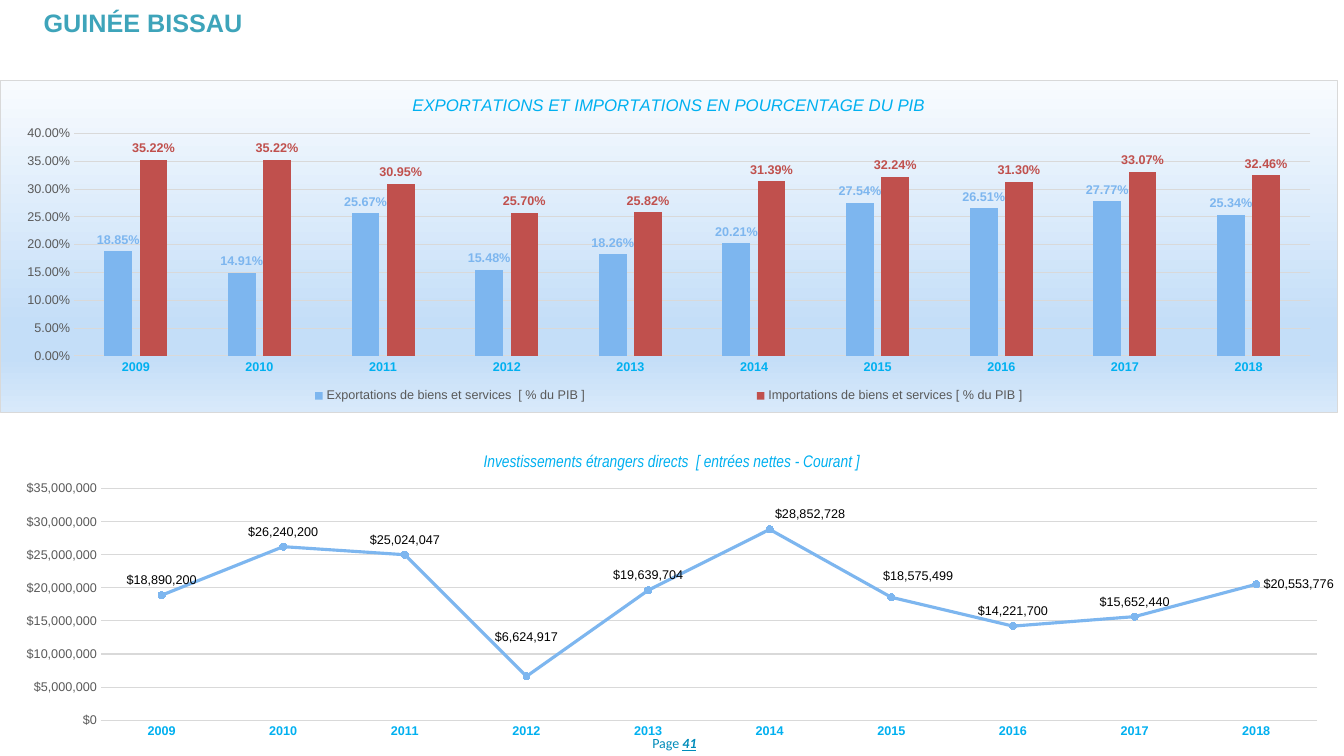
from lxml import etree
from pptx import Presentation
from pptx.chart.data import CategoryChartData as Data
from pptx.dml.color import RGBColor
from pptx.enum.chart import XL_CHART_TYPE as Kind, XL_LABEL_POSITION as Pos
from pptx.enum.chart import XL_LEGEND_POSITION as Side, XL_MARKER_STYLE as Mark
from pptx.enum.chart import XL_TICK_MARK as Tick
from pptx.enum.text import MSO_ANCHOR as Anchor, MSO_AUTO_SIZE as Auto, PP_ALIGN as Align
from pptx.oxml import parse_xml
from pptx.util import Pt

BLUE = RGBColor(0x7D, 0xB6, 0xEF)
RED = RGBColor(0xC0, 0x50, 0x4D)
SKY = RGBColor(0x00, 0xB0, 0xF0)
TEAL = RGBColor(0x3E, 0xA4, 0xBA)
OCEAN = RGBColor(0x00, 0x8C, 0xBA)
GREY = RGBColor(0x59, 0x59, 0x59)
PALE = RGBColor(0xD9, 0xD9, 0xD9)
BLACK = RGBColor(0, 0, 0)
WHITE = RGBColor(0xFF, 0xFF, 0xFF)
SHADES = [(0, RGBColor(0xF8, 0xFB, 0xFE)), (74, RGBColor(0xC4, 0xDE, 0xF8)),
          (83, RGBColor(0xC4, 0xDE, 0xF8)), (100, RGBColor(0xD8, 0xE9, 0xFA))]

C_NS = "http://schemas.openxmlformats.org/drawingml/2006/chart"
A_NS = "http://schemas.openxmlformats.org/drawingml/2006/main"
X_NS = "http://schemas.microsoft.com/office/drawing/2012/chart"

YEARS = [str(year) for year in range(2009, 2019)]
TRADE = [
    ("Exportations de biens et services  [ % du PIB ]", BLUE,
     [.1885, .1491, .2567, .1548, .1826, .2021, .2754, .2651, .2777, .2534]),
    ("Importations de biens et services [ % du PIB ]", RED,
     [.3522, .3522, .3095, .257, .2582, .3139, .3224, .313, .3307, .3246]),
]
FLOWS = [18890200, 26240200, 25024047, 6624917, 19639704,
         28852728, 18575499, 14221700, 15652440, 20553776]
SHIFTS = {3: (0, -.08), 5: (.03, 0), 6: (.02, -.02)}
MONEY = '"$"#,##0'


def style(font, size, color, bold=False, italic=False, name="Arial"):
    font.size, font.name = Pt(size), name
    font.bold, font.italic = bold, italic
    font.color.rgb = color


def place(node, index, **parts):
    for old in node.xpath("c:layout"):
        node.remove(old)
    layout = etree.Element(f"{{{C_NS}}}layout")
    manual = etree.SubElement(layout, f"{{{C_NS}}}manualLayout")
    for tag, value in parts.items():
        etree.SubElement(manual, f"{{{C_NS}}}{tag}", val=str(value))
    node.insert(index, layout)


def frame(node, index, x, y, w, h, **parts):
    place(node, index, **parts, xMode="edge", yMode="edge", x=x, y=y, w=w, h=h)


def paint(chart, fill, line):
    props = parse_xml(f'<c:spPr xmlns:c="{C_NS}" xmlns:a="{A_NS}">{fill}'
                      f'<a:ln w="{Pt(.75)}">{line}</a:ln></c:spPr>')
    chart.element.xpath("c:chart")[0].addnext(props)


def solid(color):
    return f'<a:solidFill><a:srgbClr val="{color}"/></a:solidFill>'


def blend(stops):
    marks = "".join(f'<a:gs pos="{pos * 1000}"><a:srgbClr val="{color}"/></a:gs>'
                    for pos, color in stops)
    return f'<a:gradFill><a:gsLst>{marks}</a:gsLst><a:lin ang="5400000" scaled="0"/></a:gradFill>'


def label(series, color, bold, form, pos):
    labels = series.data_labels
    labels.show_value = True
    labels.number_format, labels.number_format_is_linked = form, False
    labels.position = pos
    style(labels.font, 9, color, bold)


def unlead(chart):
    labels = chart.element.xpath(".//c:ser/c:dLbls")[0]
    for lead in labels.xpath("c:showLeaderLines"):
        lead.set("val", "0")
    labels.append(parse_xml(
        f'<c:extLst xmlns:c="{C_NS}"><c:ext xmlns:c15="{X_NS}" '
        'uri="{CE6537A1-D6FC-4f65-9D91-7224C49458BB}">'
        '<c15:showLeaderLines val="0"/></c:ext></c:extLst>'))


def add_chart(slide, kind, box, rows, title, face, form, top, step, area):
    data = Data(number_format=form)
    data.categories = YEARS
    for name, values in rows:
        data.add_series(name, values)
    chart = slide.shapes.add_chart(kind, *map(Pt, box), data).chart
    style(chart.font, 10, BLACK)
    chart.has_legend = False
    chart.has_title = True
    para = chart.chart_title.text_frame.paragraphs[0]
    para.text = title
    style(para.font, 12, SKY, italic=True, name=face)
    chart.chart_title.include_in_layout = False

    years, scale = chart.category_axis, chart.value_axis
    for axis in (years, scale):
        axis.major_tick_mark = axis.minor_tick_mark = Tick.NONE
    style(years.tick_labels.font, 9, SKY, True)
    years.format.line.color.rgb = PALE
    years.format.line.width = Pt(.75)
    style(scale.tick_labels.font, 9, GREY)
    scale.tick_labels.number_format = form
    scale.tick_labels.number_format_is_linked = False
    scale.minimum_scale, scale.maximum_scale, scale.major_unit = 0, top, step
    scale.format.line.fill.background()
    scale.major_gridlines.format.line.color.rgb = PALE
    scale.major_gridlines.format.line.width = Pt(.75)
    frame(chart.element.xpath(".//c:plotArea")[0], 0, *area, layoutTarget="inner")
    return chart


def add_trade(slide):
    chart = add_chart(slide, Kind.COLUMN_CLUSTERED, (0, 57, 955.5, 238),
                      [(name, values) for name, _, values in TRADE],
                      "EXPORTATIONS ET IMPORTATIONS EN POURCENTAGE DU PIB",
                      "Arial", "0.00%", .4, .05, (.055, .16, .925, .67))
    plot = chart.plots[0]
    plot.gap_width, plot.overlap, plot.vary_by_categories = 219, -27, False
    for series, (_, color, _) in zip(plot.series, TRADE):
        series.format.fill.solid()
        series.format.fill.fore_color.rgb = color
        label(series, color, True, "0.00%", Pos.OUTSIDE_END)
    chart.has_legend = True
    chart.legend.position = Side.BOTTOM
    chart.legend.include_in_layout = False
    style(chart.legend.font, 9, GREY)
    frame(chart.element.xpath(".//c:legend")[0], 1, .11, .91, .78, .08)
    paint(chart, blend(SHADES), solid(PALE))


def add_flows(slide):
    chart = add_chart(slide, Kind.LINE_MARKERS, (0, 313, 960, 219),
                      [("Series 1", FLOWS)],
                      "Investissements étrangers directs  [ entrées nettes - Courant ]",
                      "Arial Narrow", MONEY, 35000000, 5000000,
                      (.075, .165, .905, .755))
    chart.plots[0].vary_by_categories = False
    series = chart.plots[0].series[0]
    series.smooth = False
    series.format.line.color.rgb = BLUE
    series.format.line.width = Pt(2.25)
    marker = series.marker
    marker.style, marker.size = Mark.CIRCLE, 5
    marker.format.fill.solid()
    marker.format.fill.fore_color.rgb = BLUE
    marker.format.line.color.rgb = BLUE
    label(series, BLACK, False, MONEY, Pos.ABOVE)
    for index, (x, y) in SHIFTS.items():
        point = series.points[index].data_label
        point.position = Pos.ABOVE
        style(point.font, 9, BLACK)
        node = chart.element.xpath(f".//c:dLbl[c:idx/@val='{index}']")[0]
        place(node, 1, x=x, y=y)
    last = series.points[len(FLOWS) - 1].data_label
    last.position = Pos.RIGHT
    style(last.font, 9, BLACK)
    unlead(chart)
    paint(chart, solid(WHITE), "<a:noFill/>")


def add_title(slide):
    title = slide.shapes.title
    title.left, title.top, title.width, title.height = map(Pt, (24, 1.5, 170.5, 29))
    text = title.text_frame
    text.text = "GUINÉE BISSAU"
    text.word_wrap, text.auto_size = False, Auto.SHAPE_TO_FIT_TEXT
    text.vertical_anchor = Anchor.TOP
    para = text.paragraphs[0]
    para.alignment = Align.LEFT
    style(para.font, 18, TEAL, True)


def add_page(slide):
    text = slide.shapes.add_textbox(*map(Pt, (446.5, 521.5, 70.5, 18.5))).text_frame
    text.word_wrap, text.vertical_anchor = True, Anchor.MIDDLE
    para = text.paragraphs[0]
    para.alignment = Align.CENTER
    style(para.font, 10, OCEAN, name="Calibri")
    para.add_run().text = "Page "
    number = para.add_run()
    number.text = "41"
    number.font.bold = number.font.italic = number.font.underline = True


def main():
    deck = Presentation()
    deck.slide_width, deck.slide_height = Pt(960), Pt(540)
    slide = deck.slides.add_slide(deck.slide_layouts[5])
    add_trade(slide)
    add_flows(slide)
    add_page(slide)
    add_title(slide)
    deck.save("out.pptx")


if __name__ == "__main__":
    main()
